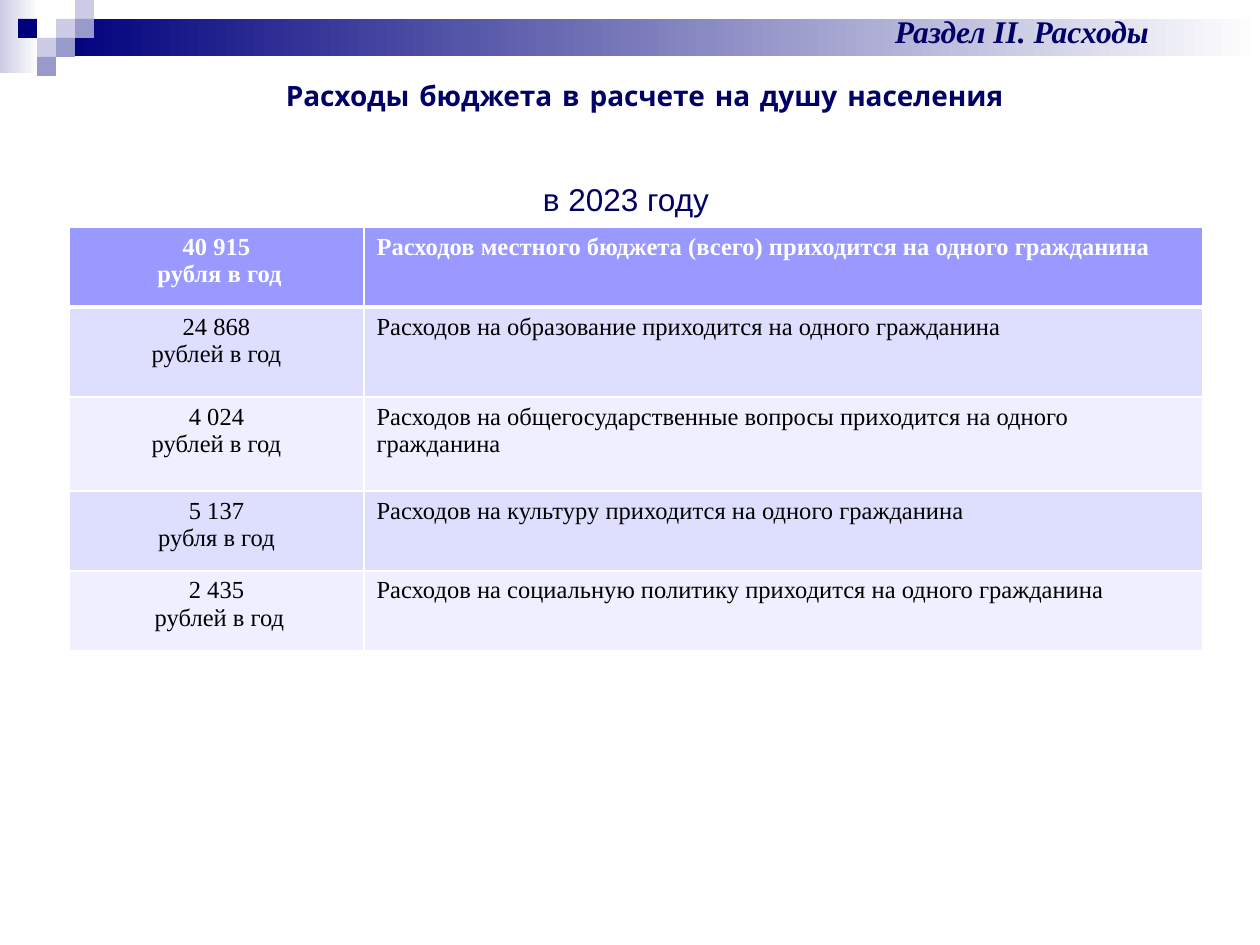
import dataclasses

import pptx
import pptx.dml.color
import pptx.enum.shapes
import pptx.enum.text
import pptx.oxml
import pptx.oxml.ns
import pptx.util

EMU_PER_PX = 914400 / 126
COLORS = {
    "white": "FFFFFF", "black": "000000", "heading": "000066",
    "navy": "00007D", "pale": "CCCCE6", "mid": "9999CC",
    "header": "9999FF", "odd_row": "DEDEFF", "even_row": "EFEFFF",
}
SERIF = "Times New Roman"
CENTER = pptx.enum.text.PP_ALIGN.CENTER
LEFT = pptx.enum.text.PP_ALIGN.LEFT


@dataclasses.dataclass
class Square:
    col: int
    row: int
    color: str


@dataclasses.dataclass
class Label:
    text: str
    box: tuple[int, int, int, int]
    font: str
    size: int
    bold: bool = False
    italic: bool = False
    anchor: pptx.enum.text.MSO_ANCHOR = pptx.enum.text.MSO_ANCHOR.TOP


@dataclasses.dataclass
class Expense:
    amount: str
    unit: str
    purpose: str
    height: int


SQUARE = 19
SQUARES_LEFT = 18
SQUARES = [
    Square(2, 1, "pale"), Square(3, 0, "pale"), Square(3, 1, "mid"),
    Square(1, 2, "pale"), Square(0, 1, "navy"), Square(2, 2, "mid"),
    Square(1, 3, "mid"),
]
LABELS = [
    Label("в 2023 году", (-4, 165, 1260, 68), "Arial", 18,
          anchor=pptx.enum.text.MSO_ANCHOR.MIDDLE),
    Label("Раздел II. Расходы", (789, 6, 466, 50), SERIF, 18, True, True),
    Label("Расходы бюджета в расчете на душу населения",
          (110, 72, 1070, 47), "Comic Neue", 16, True),
]
TABLE_LEFT, TABLE_TOP = 69, 227
COLUMNS = (295, 839)
EXPENSES = [
    Expense("40 915", " рубля в год", "Расходов местного бюджета (всего) приходится на одного гражданина", 80),
    Expense("24 868", "рублей в год", "Расходов на образование приходится на одного гражданина", 90),
    Expense("4 024", "рублей в год", "Расходов на общегосударственные вопросы приходится на одного гражданина", 94),
    Expense("5 137", "рубля в год", "Расходов на культуру приходится на одного гражданина", 80),
    Expense("2 435", " рублей в год", "Расходов на социальную политику приходится на одного гражданина", 80),
]


def px(n: int) -> pptx.util.Emu:
    return pptx.util.Emu(round(n * EMU_PER_PX))


def rgb(name: str) -> pptx.dml.color.RGBColor:
    return pptx.dml.color.RGBColor.from_string(COLORS[name])


def add_rect(s, box: tuple[int, int, int, int], color: str, fade_to: str | None = None) -> None:
    """Draw a borderless rectangle, fading left to right if fade_to is given."""
    sp = s.shapes.add_shape(pptx.enum.shapes.MSO_SHAPE.RECTANGLE, *map(px, box))
    sp.shadow.inherit = False
    sp.line.fill.background()
    if fade_to is None:
        sp.fill.solid()
        sp.fill.fore_color.rgb = rgb(color)
        return
    sp.fill.gradient()
    sp.fill.gradient_angle = 0
    for stop, name in zip(sp.fill.gradient_stops, (color, fade_to)):
        stop.color.rgb = rgb(name)


def style(p, font: str, size: int, color: str, bold: bool, italic: bool = False) -> None:
    p.font.name = font
    p.font.size = pptx.util.Pt(size)
    p.font.color.rgb = rgb(color)
    p.font.bold = bold
    p.font.italic = italic


def add_label(s, label: Label) -> None:
    tf = s.shapes.add_textbox(*map(px, label.box)).text_frame
    tf.word_wrap = True
    tf.vertical_anchor = label.anchor
    p = tf.paragraphs[0]
    p.text = label.text
    p.alignment = CENTER
    style(p, label.font, label.size, "heading", label.bold, label.italic)


def add_borders(cell, widths: dict[str, int]) -> None:
    """Add white borders, with widths in points keyed by side in schema order."""
    tcPr = cell._tc.get_or_add_tcPr()
    for side, width in widths.items():
        tcPr.append(pptx.oxml.parse_xml(
            f'<a:ln{side} {pptx.oxml.ns.nsdecls("a")} w="{pptx.util.Pt(width)}">'
            f'<a:solidFill><a:srgbClr val="{COLORS["white"]}"/></a:solidFill></a:ln{side}>'))


def fill_cell(cell, lines: list[str], row: int, align) -> None:
    header = row == 0
    add_borders(cell, {"L": 1, "R": 1, "T": 3 if row == 1 else 1, "B": 3 if header else 1})
    cell.fill.solid()
    cell.fill.fore_color.rgb = rgb("header" if header else "odd_row" if row % 2 else "even_row")
    cell.text_frame.text = "\n".join(lines)
    for p in cell.text_frame.paragraphs:
        p.alignment = align
        style(p, SERIF, 14, "white" if header else "black", header)


def add_expense_table(s) -> None:
    height = sum(e.height for e in EXPENSES)
    table = s.shapes.add_table(len(EXPENSES), len(COLUMNS), px(TABLE_LEFT), px(TABLE_TOP),
                               px(sum(COLUMNS)), px(height)).table
    for column, width in zip(table.columns, COLUMNS):
        column.width = px(width)
    for i, e in enumerate(EXPENSES):
        table.rows[i].height = px(e.height)
        fill_cell(table.cell(i, 0), [e.amount, e.unit], i, CENTER)
        fill_cell(table.cell(i, 1), [e.purpose], i, LEFT)


def main() -> None:
    prs = pptx.Presentation()
    prs.slide_width, prs.slide_height = px(1260), px(945)
    s = prs.slides.add_slide(prs.slide_layouts[6])
    add_rect(s, (0, 0, 39, 73), "pale", "white")
    add_rect(s, (57, 19, 1203, 37), "navy", "white")
    for q in SQUARES:
        add_rect(s, (SQUARES_LEFT + q.col * SQUARE, q.row * SQUARE, SQUARE, SQUARE), q.color)
    add_expense_table(s)
    for label in LABELS:
        add_label(s, label)
    prs.save("out.pptx")


if __name__ == "__main__":
    main()
